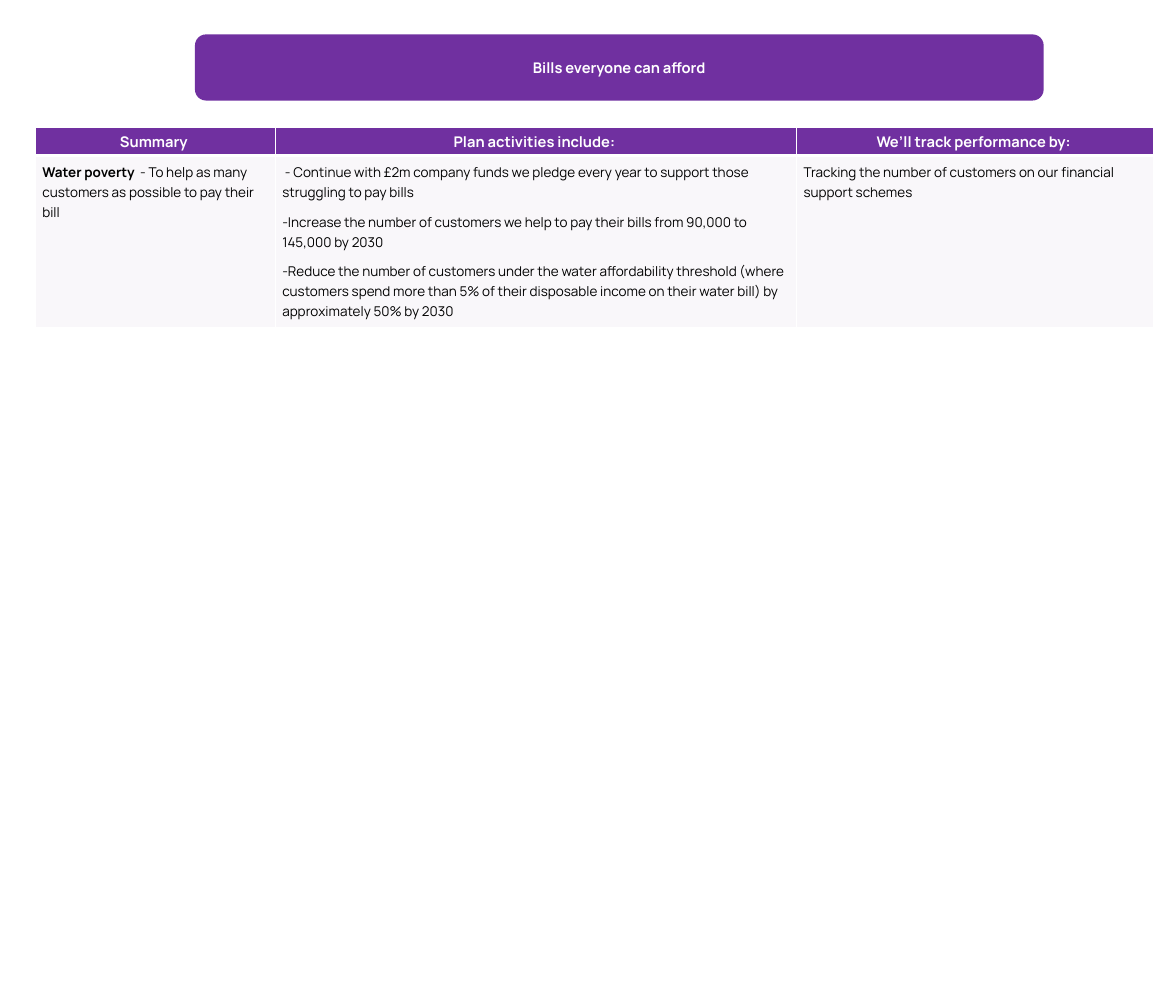
from lxml import etree
from pptx import Presentation
from pptx import util as u
from pptx.dml.color import RGBColor
from pptx.enum import shapes, text
from pptx.oxml import ns

PURPLE = RGBColor(0x70, 0x30, 0xA0)
LILAC = RGBColor(0xEA, 0xE1, 0xEF)
WHITE = RGBColor(0xFF, 0xFF, 0xFF)
BLACK = RGBColor(0, 0, 0)
FONT = "Manrope"
WIDE, HIGH = 13.33, 11.42
COLS = [2.72, 5.91, 4.05]
ROWS = [0.31, 1.63]

HEADS = ["Summary ", "Plan activities include: ", "We’ll track performance by: "]
BODY = [
    [["Water poverty ", " - To help as many customers as possible to pay their bill"]],
    [
        [" - Continue with £2m company funds we pledge every year to support those struggling to pay bills"],
        ["-Increase the number of customers we help to pay their bills from 90,000 to 145,000 by 2030"],
        ["-Reduce the number of customers under the water affordability threshold (where customers spend more than 5% of their disposable income on their water bill) by approximately 50% by 2030"],
    ],
    [["Tracking the number of customers on our financial support schemes"]],
]


def style(para, size, color, bold):
    font = para.font
    font.name, font.size, font.bold = FONT, u.Pt(size), bold
    font.color.rgb = color


def edge(cell, side, width):
    props = cell._tc.get_or_add_tcPr()
    line = etree.SubElement(props, ns.qn("a:ln" + side), w=str(u.Pt(width)))
    fill = etree.SubElement(line, ns.qn("a:solidFill"))
    etree.SubElement(fill, ns.qn("a:srgbClr"), val=str(WHITE))


deck = Presentation()
deck.slide_width, deck.slide_height = u.Inches(WIDE), u.Inches(HIGH)
slide = deck.slides.add_slide(deck.slide_layouts[6])

frame = slide.shapes.add_table(
    len(ROWS), len(COLS), u.Inches(WIDE * 0.03), u.Inches(HIGH * 0.127),
    u.Inches(sum(COLS)), u.Inches(sum(ROWS)))
table = frame.table
table.horz_banding = False
for col, width in zip(table.columns, COLS):
    col.width = u.Inches(width)
for row, height in zip(table.rows, ROWS):
    row.height = u.Inches(height)

grid = [[[[head]] for head in HEADS], BODY]
for r, line in enumerate(grid):
    top = r == 0
    for c, paras in enumerate(line):
        cell = table.cell(r, c)
        pad = u.Inches(0 if top else 0.08)
        cell.margin_left = cell.margin_right = pad
        cell.margin_top = cell.margin_bottom = pad
        cell.vertical_anchor = text.MSO_ANCHOR.MIDDLE if top else text.MSO_ANCHOR.TOP
        for side in "LRTB":
            edge(cell, side, 3 if side == ("B" if top else "T") else 1)
        cell.fill.solid()
        cell.fill.fore_color.rgb = PURPLE if top else LILAC
        if not top:
            tint = cell._tc.tcPr.find(".//" + ns.qn("a:srgbClr") + f"[@val='{LILAC}']")
            etree.SubElement(tint, ns.qn("a:alpha"), val="26000")
        for i, runs in enumerate(paras):
            body = cell.text_frame
            para = body.paragraphs[0] if i == 0 else body.add_paragraph()
            para.alignment = text.PP_ALIGN.CENTER if top else text.PP_ALIGN.LEFT
            para.line_spacing, para.space_after = 1.07, u.Pt(8)
            style(para, 12 if top else 11, WHITE if top else BLACK, top)
            for j, words in enumerate(runs):
                run = para.add_run()
                run.text = words
                if len(runs) > 1:
                    run.font.bold = j == 0

title = slide.shapes.add_shape(
    shapes.MSO_SHAPE.ROUNDED_RECTANGLE, u.Inches(2.21), u.Inches(0.39),
    u.Inches(9.62), u.Inches(0.75))
title.shadow.inherit = False
title.fill.solid()
title.fill.fore_color.rgb = PURPLE
title.line.fill.background()
title.text_frame.text = "Bills everyone can afford"
title.text_frame.vertical_anchor = text.MSO_ANCHOR.MIDDLE
para = title.text_frame.paragraphs[0]
para.alignment = text.PP_ALIGN.CENTER
style(para, 12, WHITE, True)

deck.save("out.pptx")
